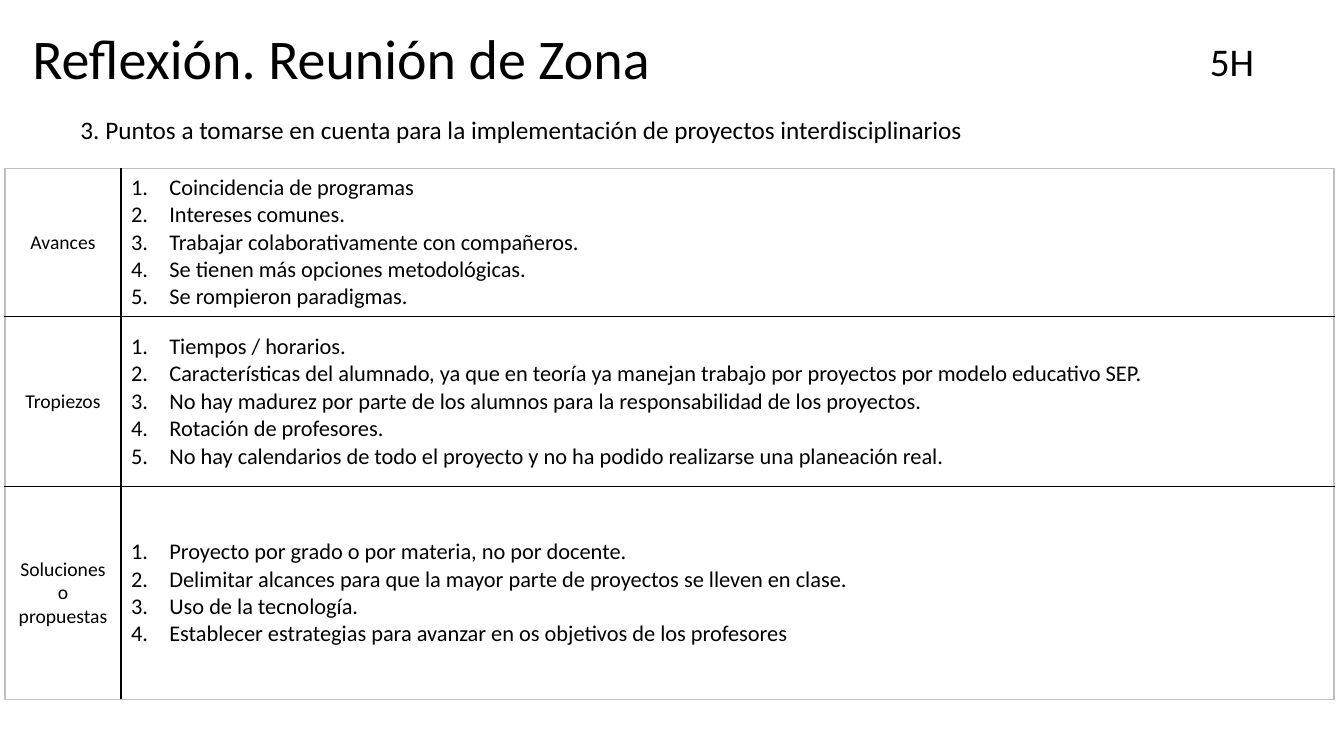
from pptx import Presentation
from pptx.dml.color import RGBColor
from pptx.enum.text import MSO_ANCHOR as Anchor, MSO_AUTO_SIZE as Auto, PP_ALIGN as Align
from pptx.oxml.xmlchemy import OxmlElement as Element
from pptx.util import Inches, Pt

BLACK = RGBColor(0, 0, 0)
WHITE = RGBColor(255, 255, 255)
GREY = RGBColor(0xBF, 0xBF, 0xBF)
FONT = "Calibri"

TITLE = "Reflexión. Reunión de Zona"
TEXTS = [
    ("5H", 28, (11.9, 0.32, 0.82, 0.57)),
    ("3. Puntos a tomarse en cuenta para la implementación de proyectos interdisciplinarios",
     18, (0.7, 1.08, 11.77, 0.42)),
]
ROWS = [
    ("Avances", 1.47, [
        "Coincidencia de programas",
        "Intereses comunes.",
        "Trabajar colaborativamente con compañeros.",
        "Se tienen más opciones metodológicas.",
        "Se rompieron paradigmas.",
    ]),
    ("Tropiezos", 1.69, [
        "Tiempos / horarios.",
        "Características del alumnado, ya que en teoría ya manejan trabajo por proyectos por modelo educativo SEP.",
        "No hay madurez por parte de los alumnos para la responsabilidad de los proyectos.",
        "Rotación de profesores.",
        "No hay calendarios de todo el proyecto y no ha podido realizarse una planeación real.",
    ]),
    ("Soluciones o propuestas", 2.11, [
        "Proyecto por grado o por materia, no por docente.",
        "Delimitar alcances para que la mayor parte de proyectos se lleven en clase.",
        "Uso de la tecnología.",
        "Establecer estrategias para avanzar en os objetivos de los profesores",
    ]),
]
COLS = (1.15, 12.03)
TABLE_LEFT, TABLE_TOP = 0.05, 1.67
INDENT = Inches(0.38)


def write(p, text, size, **formats):
    r = p.add_run()
    r.text = text
    for name, value in {"name": FONT, "size": Pt(size)}.items():
        setattr(r.font, name, value)
    r.font.color.rgb = BLACK
    for name, value in formats.items():
        setattr(p, name, value)


def number(p):
    pPr = p._p.get_or_add_pPr()
    pPr.set("marL", str(INDENT))
    pPr.set("indent", str(-INDENT))
    bullet = Element("a:buAutoNum")
    bullet.set("type", "arabicPeriod")
    pPr.append(bullet)


def border(cell, side, color):
    ln = Element(f"a:{side}")
    ln.set("w", str(Pt(1)))
    fill, clr = Element("a:solidFill"), Element("a:srgbClr")
    clr.set("val", str(color))
    fill.append(clr)
    ln.append(fill)
    cell._tc.get_or_add_tcPr().append(ln)


def fill_cell(cell, lines, size, numbered):
    cell.vertical_anchor = Anchor.MIDDLE
    tf = cell.text_frame
    for i, line in enumerate(lines):
        p = tf.add_paragraph() if i else tf.paragraphs[0]
        write(p, line, size, alignment=Align.LEFT if numbered else Align.CENTER)
        if numbered:
            number(p)


def main():
    prs = Presentation()
    prs.slide_width, prs.slide_height = Inches(13.33), Inches(7.5)
    s = prs.slides.add_slide(prs.slide_layouts[5])

    title = s.shapes.title
    box = dict(zip(("left", "top", "width", "height"), map(Inches, (0.22, 0.15, 8.55, 0.92))))
    for name, value in box.items():
        setattr(title, name, value)
    tf = title.text_frame
    tf.auto_size, tf.vertical_anchor = Auto.NONE, Anchor.MIDDLE
    write(tf.paragraphs[0], TITLE, 40, alignment=Align.LEFT, line_spacing=0.9)

    heights = [height for _, height, _ in ROWS]
    table = s.shapes.add_table(len(ROWS), len(COLS), *map(Inches, (
        TABLE_LEFT, TABLE_TOP, sum(COLS), sum(heights)))).table
    table.first_row = table.horz_banding = False
    for col, width in zip(table.columns, COLS):
        col.width = Inches(width)
    last_row, last_col = len(ROWS) - 1, len(COLS) - 1
    for i, (label, height, points) in enumerate(ROWS):
        table.rows[i].height = Inches(height)
        fill_cell(table.cell(i, 0), [label], 14, False)
        fill_cell(table.cell(i, 1), points, 16, True)
        for j in range(len(COLS)):
            cell = table.cell(i, j)
            outer = {"lnL": j == 0, "lnR": j == last_col, "lnT": i == 0, "lnB": i == last_row}
            for side, is_outer in outer.items():
                border(cell, side, GREY if is_outer else BLACK)
            cell.fill.solid()
            cell.fill.fore_color.rgb = WHITE

    for text, size, place in TEXTS:
        tf = s.shapes.add_textbox(*map(Inches, place)).text_frame
        tf.word_wrap, tf.auto_size = True, Auto.SHAPE_TO_FIT_TEXT
        write(tf.paragraphs[0], text, size)

    prs.save("out.pptx")


if __name__ == "__main__":
    main()
